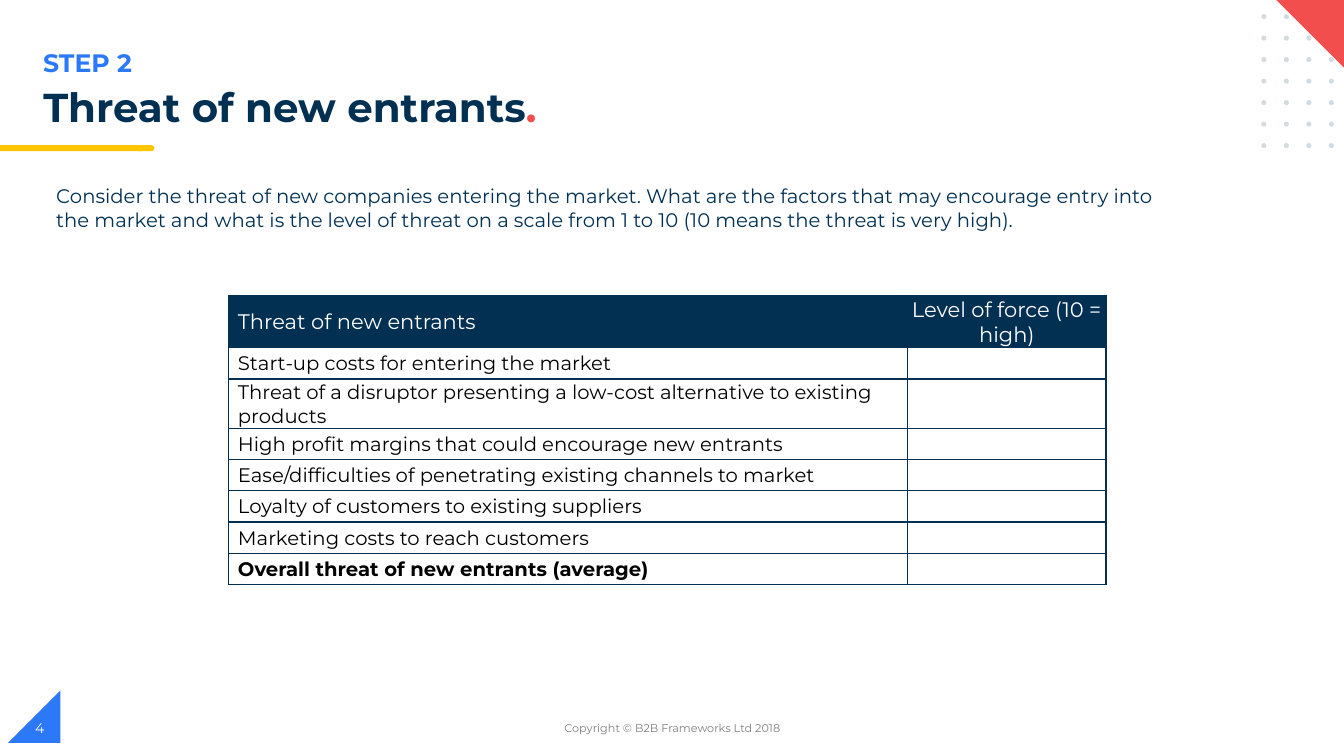
from lxml import etree
from pptx import Presentation
from pptx import oxml
from pptx.dml.color import RGBColor
from pptx.enum import shapes, text
from pptx.oxml import ns
from pptx.util import Inches, Pt

NAVY = RGBColor(0x02, 0x30, 0x53)
BLUE = RGBColor(0x2B, 0x79, 0xF8)
RED = RGBColor(0xF2, 0x4E, 0x4E)
YELLOW = RGBColor(0xFF, 0xC6, 0x00)
DOT_GREY = RGBColor(0xD1, 0xDB, 0xE0)
FOOTER_GREY = RGBColor(0x7F, 0x7F, 0x7F)
WHITE = RGBColor(0xFF, 0xFF, 0xFF)
BLACK = RGBColor(0x00, 0x00, 0x00)
FONT = "Montserrat"

presentation = Presentation()
presentation.slide_width = Inches(13.33)
presentation.slide_height = Inches(7.5)
slide = presentation.slides.add_slide(presentation.slide_layouts[5])


def add_filled(kind, left, top, width, height, color):
    shape = slide.shapes.add_shape(
        kind, Inches(left), Inches(top), Inches(width), Inches(height))
    shape.shadow.inherit = False
    shape.fill.solid()
    shape.fill.fore_color.rgb = color
    shape.line.fill.background()
    return shape


def set_font(paragraph, size, color, bold=False):
    paragraph.font.name = FONT
    paragraph.font.size = Pt(size)
    paragraph.font.bold = bold
    paragraph.font.color.rgb = color


# Corner triangles and dot grid
MSO = shapes.MSO_SHAPE
page_corner = add_filled(MSO.RIGHT_TRIANGLE, 0.08, 6.85, 0.52, 0.52, BLUE)
page_corner._element.spPr.xfrm.set("flipH", "1")
for row in range(7):
    for column in range(4):
        add_filled(MSO.OVAL, 12.51 + column * 0.67 / 3, 0.14 + row * 1.28 / 6,
                   0.05, 0.05, DOT_GREY)
top_corner = add_filled(MSO.RIGHT_TRIANGLE, 12.65, -0.01, 0.72, 0.72, RED)
top_corner.rotation = 180

# Yellow rule with a rounded end
add_filled(MSO.FLOWCHART_TERMINATOR, 1.34, 1.44, 0.19, 0.06, YELLOW)
add_filled(MSO.RECTANGLE, 0, 1.44, 1.41, 0.06, YELLOW)

# Title
title = slide.shapes.title
title.left, title.top = Inches(0.33), Inches(0.82)
title.width, title.height = Inches(9.03), Inches(0.56)
title.text_frame.auto_size = text.MSO_AUTO_SIZE.NONE
title.text_frame.vertical_anchor = text.MSO_ANCHOR.TOP
heading = title.text_frame.paragraphs[0]
heading.alignment = text.PP_ALIGN.LEFT
heading.line_spacing = 0.9
set_font(heading, 28.8, NAVY, bold=True)
heading.add_run().text = "Threat of new entrants"
full_stop = heading.add_run()
full_stop.text = "."
full_stop.font.color.rgb = RED

# Step label, introduction, footer and page number
LEFT, CENTER = text.PP_ALIGN.LEFT, text.PP_ALIGN.CENTER
TOP, MIDDLE = text.MSO_ANCHOR.TOP, text.MSO_ANCHOR.MIDDLE
introduction = (
    "Consider the threat of new companies entering the market. What are the "
    "factors that may encourage entry into the market and what is the level of "
    "threat on a scale from 1 to 10 (10 means the threat is very high).")
text_boxes = [
    ("STEP 2", 0.33, 0.42, 6.69, 0.4, 18, BLUE, True, LEFT, TOP),
    (introduction, 0.46, 1.78, 11.24, 0.57, 14, NAVY, False, LEFT, TOP),
    ("Copyright © B2B Frameworks Ltd 2018", 4.42, 7.02, 4.5, 0.4, 8,
     FOOTER_GREY, False, CENTER, MIDDLE),
    ("4", 0.25, 7.02, 3, 0.4, 10, WHITE, False, LEFT, MIDDLE),
]
for words, left, top, width, height, size, color, bold, align, anchor in text_boxes:
    box = slide.shapes.add_textbox(
        Inches(left), Inches(top), Inches(width), Inches(height))
    box.text_frame.word_wrap = True
    box.text_frame.vertical_anchor = anchor
    paragraph = box.text_frame.paragraphs[0]
    paragraph.text = words
    paragraph.alignment = align
    set_font(paragraph, size, color, bold)

# Scoring table
factors = [
    "Threat of new entrants",
    "Start-up costs for entering the market",
    "Threat of a disruptor presenting a low-cost alternative to existing products",
    "High profit margins that could encourage new entrants",
    "Ease/difficulties of penetrating existing channels to market",
    "Loyalty of customers to existing suppliers",
    "Marketing costs to reach customers",
    "Overall threat of new entrants (average)",
]
row_heights = [0.52, 0.31, 0.49] + [0.31] * 5
table = slide.shapes.add_table(
    len(factors), 2, Inches(2.27), Inches(2.93), Inches(8.7),
    Inches(sum(row_heights))).table
table.first_row = table.horz_banding = False
table.columns[0].width, table.columns[1].width = Inches(6.73), Inches(1.97)

for row, (factor, row_height) in enumerate(zip(factors, row_heights)):
    table.rows[row].height = Inches(row_height)
    is_header = row == 0
    score = "Level of force (10 = high)" if is_header else ""
    for column, words in enumerate([factor, score]):
        cell = table.cell(row, column)
        cell.margin_left = cell.margin_top = cell.margin_right = Inches(0.01)
        cell.margin_bottom = 0
        cell.vertical_anchor = MIDDLE
        paragraph = cell.text_frame.paragraphs[0]
        paragraph.text = words
        if column == 0:
            paragraph._p.get_or_add_pPr().set("marL", str(Inches(0.08)))
        else:
            paragraph.alignment = CENTER
        if is_header:
            set_font(paragraph, 15, WHITE)
            cell.fill.solid()
            cell.fill.fore_color.rgb = NAVY
        else:
            set_font(paragraph, 14, BLACK, bold=row == len(factors) - 1)
            cell.fill.background()

        # Cell borders come before the fill
        properties = cell._tc.get_or_add_tcPr()
        for position, side in enumerate(["lnL", "lnR", "lnT", "lnB"]):
            border = oxml.parse_xml(
                f'<a:{side} {ns.nsdecls("a")} w="{Pt(1)}"/>')
            border_fill = etree.SubElement(border, ns.qn("a:solidFill"))
            etree.SubElement(border_fill, ns.qn("a:srgbClr"), val=str(NAVY))
            properties.insert(position, border)

table.cell(0, 1).vertical_anchor = text.MSO_ANCHOR.BOTTOM

presentation.save("out.pptx")
